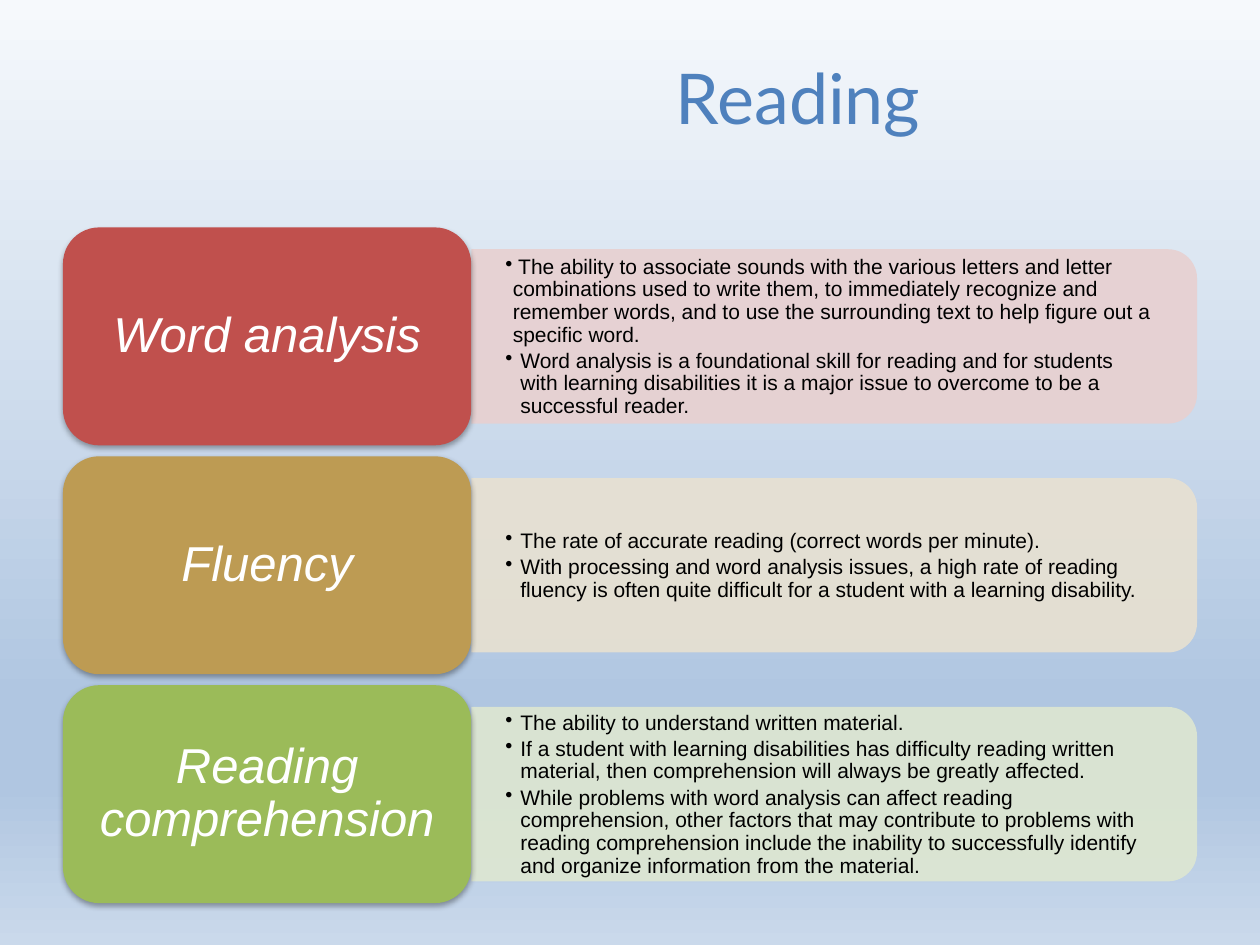
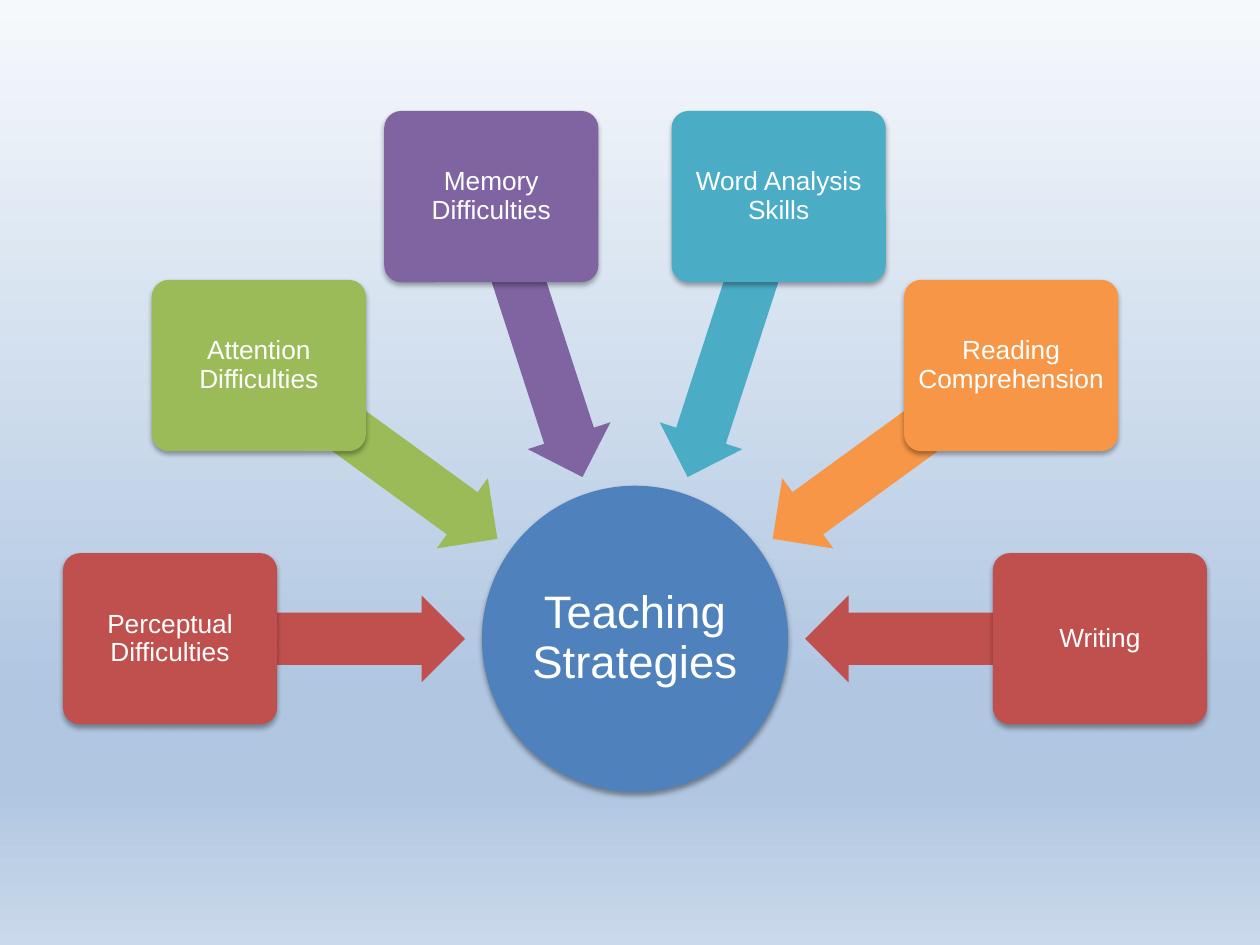
import math
from dataclasses import dataclass

import pptx
import pptx.dml.color
import pptx.enum.shapes
import pptx.enum.text
import pptx.oxml
import pptx.oxml.ns
import pptx.util
from pptx.util import Inches

KIND = pptx.enum.shapes.MSO_SHAPE
ALIGN = pptx.enum.text.PP_ALIGN
RGB = pptx.dml.color.RGBColor.from_string
qn = pptx.oxml.ns.qn
NS = pptx.oxml.ns.nsdecls("a")


@dataclass(frozen=True)
class Theme:
    head: str = "Lato"
    body: str = "Arial"
    blue: str = "4F81BD"
    red: str = "C0504D"
    gold: str = "BD9B53"
    green: str = "9BBB59"
    plum: str = "8064A2"
    teal: str = "4BACC6"
    orange: str = "F79646"
    pink: str = "E8D0D0"
    sand: str = "E8E1D1"
    mint: str = "DEE7D1"
    white: str = "FFFFFF"
    black: str = "000000"
    sky: tuple = ((0, "F6F9FC"), (74, "B0C6E1"), (83, "B0C6E1"), (100, "CAD9EB"))
    title: int = 40
    tab: int = 28
    hub: int = 26
    card: int = 15
    note: int = 12


theme = Theme()


def write(shape, *lines, size, color=theme.white, font=theme.body, align=ALIGN.CENTER,
          pad=(0.1, 0.05), italic=False, hangs=(), space=0.9, after=0):
    """Fill a shape with paragraphs; each value in hangs makes its line a bullet."""
    frame = shape.text_frame
    frame.word_wrap = True
    frame.vertical_anchor = pptx.enum.text.MSO_ANCHOR.MIDDLE
    frame.margin_left = frame.margin_right = Inches(pad[0])
    frame.margin_top = frame.margin_bottom = Inches(pad[1])
    for i, line in enumerate(lines):
        para = frame.add_paragraph() if i else frame.paragraphs[0]
        para.alignment = align
        para.line_spacing = space
        para.space_after = pptx.util.Pt(after)
        if hangs:
            para.level = 1
            props = para._p.get_or_add_pPr()
            props.set("marL", str(Inches(hangs[i])))
            props.set("indent", str(-Inches(hangs[i])))
            props.append(pptx.oxml.parse_xml(f'<a:buChar {NS} char="•"/>'))
        run = para.add_run()
        run.text = line
        run.font.name = font
        run.font.size = pptx.util.Pt(size)
        run.font.italic = italic
        run.font.color.rgb = RGB(color)


def draw(slide, kind, mid, size, color, adjust=(), turn=0, alpha=100, shade=0):
    """Add a filled shape centred on mid; shade is the shadow's opacity in percent."""
    (x, y), (wide, tall) = mid, size
    shape = slide.shapes.add_shape(kind, Inches(x - wide / 2), Inches(y - tall / 2),
                                   Inches(wide), Inches(tall))
    for i, value in enumerate(adjust):
        shape.adjustments[i] = value
    shape.rotation = turn
    shape.fill.solid()
    shape.fill.fore_color.rgb = RGB(color)
    shape.line.fill.background()
    shape.shadow.inherit = False
    if alpha < 100:
        tint = shape._element.spPr.find(qn("a:solidFill"))[0]
        tint.append(pptx.oxml.parse_xml(f'<a:alpha {NS} val="{alpha * 1000}"/>'))
    if shade:
        shape._element.spPr.find(qn("a:effectLst")).append(pptx.oxml.parse_xml(
            f'<a:outerShdw {NS} blurRad="40000" dist="23000" dir="5400000" rotWithShape="0">'
            f'<a:srgbClr val="{theme.black}"><a:alpha val="{shade * 1000}"/></a:srgbClr>'
            '</a:outerShdw>'))
    return shape


deck = pptx.Presentation()
deck.slide_width, deck.slide_height = Inches(10), Inches(7.5)
blank = deck.slide_layouts[6]

# Shared sky background
master = deck.slide_master
master.background.fill.gradient()
master.background.fill.gradient_angle = 270
stops = master.element.cSld.find(".//" + qn("a:gsLst"))
for stop in list(stops):
    stops.remove(stop)
for place, color in theme.sky:
    stops.append(pptx.oxml.parse_xml(
        f'<a:gs {NS} pos="{place * 1000}"><a:srgbClr val="{color}"/></a:gs>'))

# Slide 1: the three reading skills
slide = deck.slides.add_slide(blank)
title = slide.shapes.add_textbox(Inches(3), Inches(0.25), Inches(6.67), Inches(1.03))
write(title, "Reading", size=theme.title, color=theme.blue, font=theme.head, space=1)

skills = [
    ("Word analysis", theme.red, theme.pink, (0.06, 0.12), [
        " The ability to associate sounds with the various letters and letter combinations "
        "used to write them, to immediately recognize and remember words, and to use the "
        "surrounding text to help figure out a specific word.",
        "Word analysis is a foundational skill for reading and for students with learning "
        "disabilities it is a major issue to overcome to be a successful reader."]),
    ("Fluency", theme.gold, theme.sand, (0.12, 0.12), [
        "The rate of accurate reading (correct words per minute).",
        "With processing and word analysis issues, a high rate of reading fluency is often "
        "quite difficult for a student with a learning disability."]),
    ("Reading comprehension", theme.green, theme.mint, (0.12, 0.12, 0.12), [
        "The ability to understand written material.",
        "If a student with learning disabilities has difficulty reading written material, "
        "then comprehension will always be greatly affected.",
        "While problems with word analysis can affect reading comprehension, other factors "
        "that may contribute to problems with reading comprehension include the inability "
        "to successfully identify and organize information from the material."]),
]
tall = 1.73
for row, (name, color, pale, hangs, notes) in enumerate(skills):
    y = 2.67 + row * tall * 1.05
    draw(slide, KIND.ROUND_2_SAME_RECTANGLE, (6.62, y), (tall * 0.8, 5.76), pale,
         turn=90, alpha=90)
    box = slide.shapes.add_textbox(Inches(3.74), Inches(y - 0.62), Inches(5.69), Inches(1.25))
    write(box, *notes, size=theme.note, color=theme.black, align=ALIGN.LEFT,
          pad=(0.27, 0.14), hangs=hangs, after=2)
    tab = draw(slide, KIND.ROUNDED_RECTANGLE, (2.12, y), (3.24, tall), color, shade=35)
    write(tab, name, size=theme.tab, pad=(0.12, 0.06), italic=True)

# Slide 2: difficulties that lead to teaching strategies
slide = deck.slides.add_slide(blank)
hubx, huby = 5.04, 5.07
hub = draw(slide, KIND.OVAL, (hubx, huby), (2.43, 2.43), theme.blue, shade=38)
write(hub, "Teaching Strategies", size=theme.hub, pad=(0.02, 0.02))

cards = [
    ("Perceptual Difficulties", theme.red),
    ("Attention Difficulties", theme.green),
    ("Memory Difficulties", theme.plum),
    ("Word Analysis Skills", theme.teal),
    ("Reading Comprehension", theme.orange),
    ("Writing", theme.red),
]
for step, (name, color) in enumerate(cards):
    turn = 180 + 36 * step
    dx, dy = math.cos(math.radians(turn)), math.sin(math.radians(turn))
    draw(slide, KIND.LEFT_ARROW, (hubx + 2.52 * dx, huby + 2.52 * dy), (2.34, 0.69), color,
         adjust=(0.6, 0.5), turn=turn % 360)
    card = draw(slide, KIND.ROUNDED_RECTANGLE, (hubx + 3.69 * dx, huby + 3.69 * dy),
                (1.7, 1.36), color, adjust=(0.1,), shade=35)
    write(card, name, size=theme.card, pad=(0.03, 0.03))

deck.save("out.pptx")
